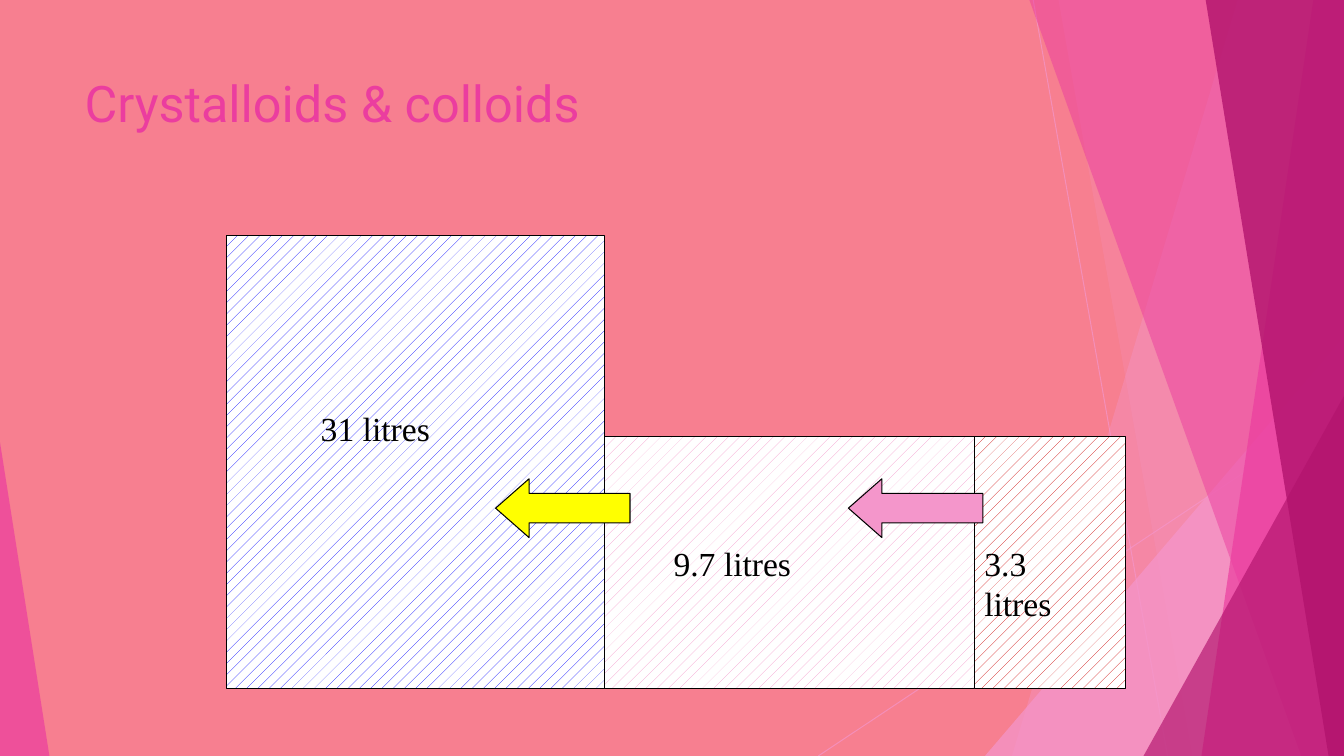
from lxml import etree
from pptx import Presentation
from pptx.dml.color import RGBColor
from pptx.enum.dml import MSO_PATTERN
from pptx.enum.shapes import MSO_CONNECTOR, MSO_SHAPE
from pptx.oxml.ns import qn
from pptx.util import Pt

STRAIGHT = MSO_CONNECTOR.STRAIGHT
TRIANGLE = MSO_SHAPE.ISOSCELES_TRIANGLE
RECTANGLE = MSO_SHAPE.RECTANGLE
LEFT_ARROW = MSO_SHAPE.LEFT_ARROW
DOTS = MSO_PATTERN.PERCENT_10

COLORS = {
    "salmon": "F77F90",
    "light_pink": "F496CB",
    "pink": "EB3D9F",
    "plum": "B2136D",
    "blue": "0000FF",
    "red": "CC0000",
    "yellow": "FFFF00",
    "white": "FFFFFF",
    "black": "000000",
}
RGB = {name: RGBColor.from_string(value) for name, value in COLORS.items()}
WIDTH, HEIGHT = 960, 540

deck = Presentation()
deck.slide_width, deck.slide_height = Pt(WIDTH), Pt(HEIGHT)
slide = deck.slides.add_slide(deck.slide_layouts[6])
slide.background.fill.solid()
slide.background.fill.fore_color.rgb = RGB["salmon"]
shapes = slide.shapes


def add_text(text, left, top, width, height, size=24, font="Times New Roman", color="black"):
    box = shapes.add_textbox(Pt(left), Pt(top), Pt(width), Pt(height))
    box.text_frame.word_wrap = True
    paragraph = box.text_frame.paragraphs[0]
    paragraph.text = text
    paragraph.font.size = Pt(size)
    paragraph.font.name = font
    paragraph.font.color.rgb = RGB[color]


def set_alpha(shape, percent):
    color = shape._element.spPr.find(".//" + qn("a:srgbClr"))
    etree.SubElement(color, qn("a:alpha")).set("val", str(percent * 1000))


for x1, y1, x2, y2 in [(738, 0, 834, HEIGHT), (WIDTH, 290, 584.5, HEIGHT)]:
    ray = shapes.add_connector(STRAIGHT, Pt(x1), Pt(y1), Pt(x2), Pt(y2))
    ray.line.width = Pt(0.75)
    ray.line.color.rgb = RGB["light_pink"]
    set_alpha(ray, 70)
    etree.SubElement(ray._element.spPr, qn("a:effectLst"))

facets = [
    ("band", 884.2, 722.9, "light_pink", 36),
    ("band", 756, 851.8, "light_pink", 20),
    ("right", 703.5, 240, "light_pink", 72),
    ("band", 735.1, 929.5, "pink", 50),
    ("band", 938.2, 858.2, "pink", 70),
    ("band", 861.1, 949, "plum", 80),
    ("right", 816.8, 282.8, "plum", 66),
    ("left", 35.3, 316, "pink", 70),
]
for kind, start, end, color, alpha in facets:
    if kind == "band":
        outline = shapes.build_freeform(Pt(start), Pt(-0.6))
        corners = [(WIDTH, -0.6), (WIDTH, HEIGHT), (end, HEIGHT)]
        outline.add_line_segments([(Pt(x), Pt(y)) for x, y in corners], close=True)
        facet = outline.convert_to_shape()
    else:
        left, right = (start, WIDTH) if kind == "right" else (0, start)
        facet = shapes.add_shape(TRIANGLE, Pt(left), Pt(end), Pt(right - left), Pt(HEIGHT - end))
        facet.adjustments[0] = 1 if kind == "right" else 0
    facet.shadow.inherit = False
    facet.line.fill.background()
    facet.fill.solid()
    facet.fill.fore_color.rgb = RGB[color]
    set_alpha(facet, alpha)

add_text("Crystalloids & colloids", 53.3, 48.2, 677, 103.7, size=36, font="Roboto", color="pink")

compartments = [
    ("31 litres", 162, 168, 270, "blue", (222, 288, 120, 36)),
    ("9.7 litres", 432, 312, 264, "light_pink", (474, 384, 132, 36)),
    ("3.3 litres", 696, 312, 108, "red", (696, 384, 84, 65.5)),
]
for volume, left, top, width, color, label in compartments:
    compartment = shapes.add_shape(RECTANGLE, Pt(left), Pt(top), Pt(width), Pt(492 - top))
    compartment.shadow.inherit = False
    compartment.fill.patterned()
    compartment.fill.pattern = DOTS
    compartment.fill.fore_color.rgb = RGB[color]
    compartment.fill.back_color.rgb = RGB["white"]
    compartment.line.color.rgb = RGB["black"]
    compartment.line.width = Pt(0.75)
    add_text(volume, *label)

for left, color in [(606, "light_pink"), (354, "yellow")]:
    flow = shapes.add_shape(LEFT_ARROW, Pt(left), Pt(342), Pt(96), Pt(42))
    flow.shadow.inherit = False
    flow.adjustments[1] = 0.57
    flow.fill.solid()
    flow.fill.fore_color.rgb = RGB[color]
    flow.line.color.rgb = RGB["black"]
    flow.line.width = Pt(0.75)

deck.save("out.pptx")
